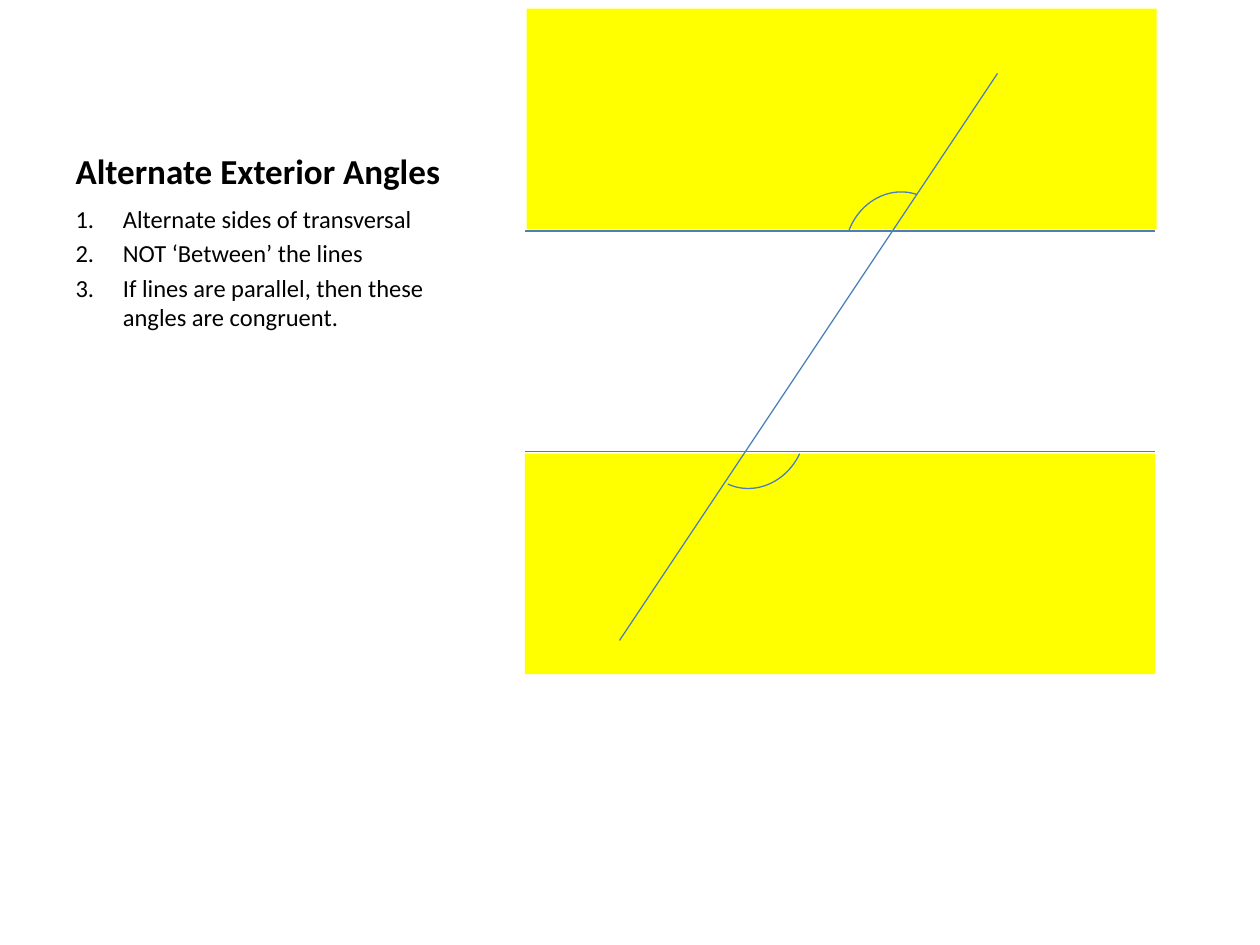
from typing import NamedTuple

from lxml import etree
from pptx import Presentation
from pptx.dml.color import RGBColor
from pptx.enum import shapes, text
from pptx.oxml import ns
from pptx.util import Pt

YELLOW = RGBColor(0xFF, 0xFF, 0x00)
BLUE = RGBColor(0x4B, 0x7E, 0xBC)
BLACK = RGBColor(0x00, 0x00, 0x00)
FONT = "Calibri"
LINE_WIDTH = 0.75
LIST_INDENT = 27


class Box(NamedTuple):
    left: float
    top: float
    width: float
    height: float


class Segment(NamedTuple):
    x1: float
    y1: float
    x2: float
    y2: float


class AngleMark(NamedTuple):
    box: Box
    rotation: float


TITLE_BOX = Box(36, 21.5, 237, 91.5)
RULES_BOX = Box(36, 113, 237, 369.4)
RULES = [
    "Alternate sides of transversal",
    "NOT ‘Between’ the lines",
    "If lines are parallel, then these angles are congruent.",
]
EXTERIOR_REGIONS = [Box(300, 259.2, 360, 126), Box(301, 5, 360, 126)]
SEGMENTS = [
    Segment(300, 132, 660, 132),
    Segment(300, 258, 660, 258),
    Segment(354, 366, 570, 42),
]
ANGLE_MARKS = [
    AngleMark(Box(396.7, 216.7, 66, 60), 114.8),
    AngleMark(Box(480.2, 112.3, 66, 60), 289.3),
]


def place(shape, box: Box) -> None:
    shape.left, shape.top, shape.width, shape.height = map(Pt, box)


def add_text(para, words: str, size: float, bold: bool = False) -> None:
    span = para.add_run()
    span.text = words
    span.font.name = FONT
    span.font.size = Pt(size)
    span.font.bold = bold
    span.font.color.rgb = BLACK


def number(para) -> None:
    """Give the paragraph an automatic number with a hanging indent."""
    para.space_before = Pt(2.8)
    properties = para._p.get_or_add_pPr()
    properties.set("marL", str(Pt(LIST_INDENT)))
    properties.set("indent", str(-Pt(LIST_INDENT)))
    etree.SubElement(properties, ns.qn("a:buFont"), typeface=FONT)
    etree.SubElement(properties, ns.qn("a:buAutoNum"), type="arabicPeriod")


def style_line(line) -> None:
    line.color.rgb = BLUE
    line.width = Pt(LINE_WIDTH)


def add_region(slide, box: Box) -> None:
    region = slide.shapes.add_shape(shapes.MSO_SHAPE.RECTANGLE, *map(Pt, box))
    region.shadow.inherit = False
    region.fill.solid()
    region.fill.fore_color.rgb = YELLOW
    region.line.fill.background()


def add_segment(slide, segment: Segment) -> None:
    connector = slide.shapes.add_connector(
        shapes.MSO_CONNECTOR.STRAIGHT, *map(Pt, segment))
    style_line(connector.line)
    etree.SubElement(connector._element.spPr, ns.qn("a:effectLst"))


def add_angle_mark(slide, mark: AngleMark) -> None:
    arc = slide.shapes.add_shape(shapes.MSO_SHAPE.ARC, *map(Pt, mark.box))
    arc.rotation = mark.rotation
    arc.shadow.inherit = False
    arc.fill.background()
    style_line(arc.line)


def fill_text(slide) -> None:
    """Write the title and the numbered rules, and drop the unused placeholder."""
    title, content, rules = slide.placeholders
    content._element.getparent().remove(content._element)

    place(title, TITLE_BOX)
    title.text_frame.vertical_anchor = text.MSO_ANCHOR.BOTTOM
    add_text(title.text_frame.paragraphs[0], "Alternate Exterior Angles", 20, bold=True)

    place(rules, RULES_BOX)
    frame = rules.text_frame
    for index, rule in enumerate(RULES):
        para = frame.add_paragraph() if index else frame.paragraphs[0]
        number(para)
        add_text(para, rule, 14)


def main() -> None:
    deck = Presentation()
    deck.slide_width, deck.slide_height = Pt(720), Pt(540)
    slide = deck.slides.add_slide(deck.slide_layouts.get_by_name("Content with Caption"))
    fill_text(slide)
    for region in EXTERIOR_REGIONS:
        add_region(slide, region)
    for segment in SEGMENTS:
        add_segment(slide, segment)
    for mark in ANGLE_MARKS:
        add_angle_mark(slide, mark)
    deck.save("out.pptx")


if __name__ == "__main__":
    main()
